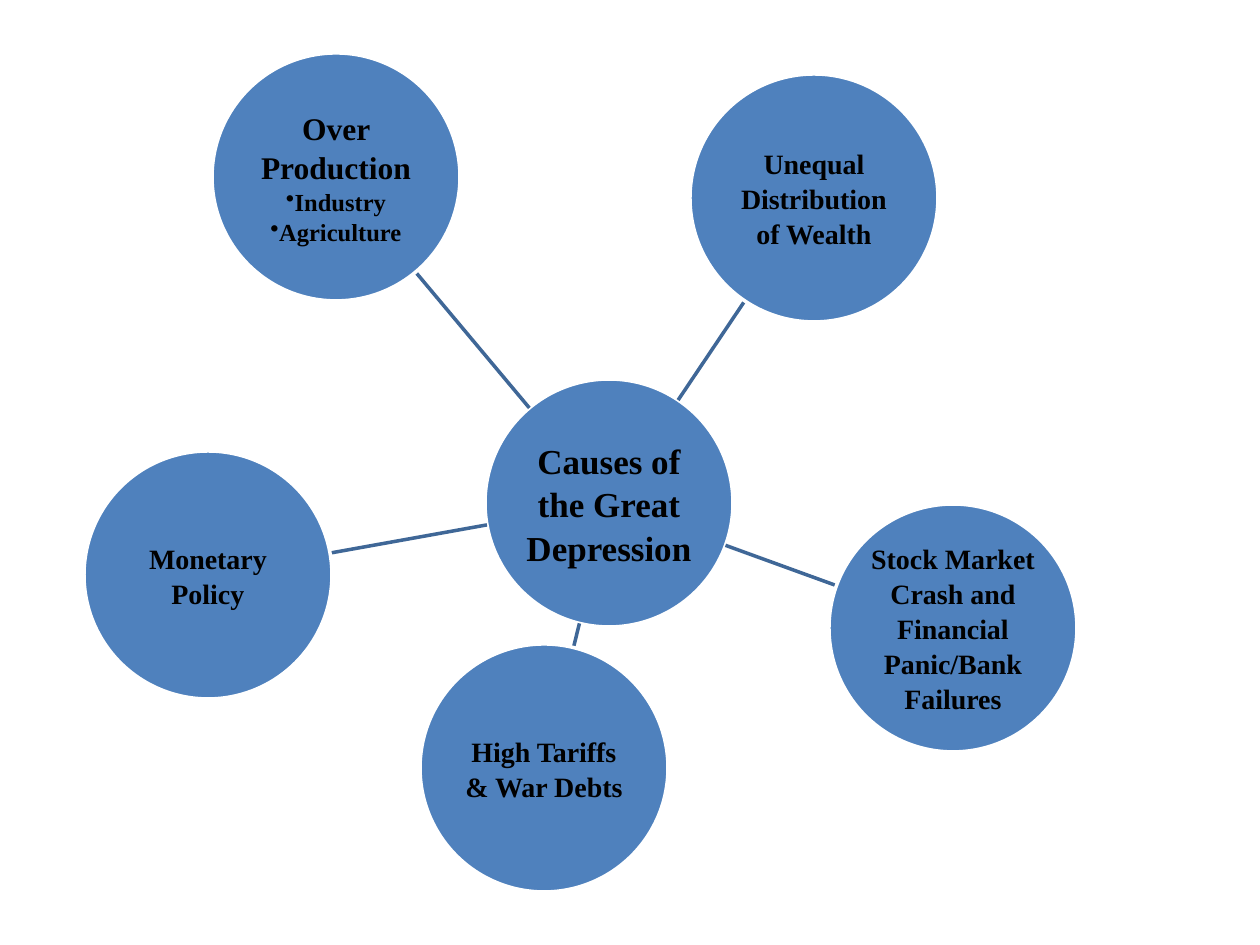
import math

from lxml import etree
from pptx import Presentation, util as u
from pptx.dml.color import RGBColor
from pptx.enum import shapes, text
from pptx.oxml.ns import qn

PX = 914400 // 126
RADIUS = 124
FONT = "Times New Roman"

BLUE = RGBColor(0x4F, 0x81, 0xBD)
SPOKE_BLUE = RGBColor(0x3F, 0x67, 0x97)
WHITE = RGBColor(0xFF, 0xFF, 0xFF)
BLACK = RGBColor(0, 0, 0)

# Circle centre in px, main text, its size in points, bulleted items
HUB = ((609, 503), "Causes of the Great Depression", 20, [])
CAUSES = [
    ((208, 575), "Monetary Policy", 16, []),
    ((336, 177), "Over Production", 18, ["Industry", "Agriculture"]),
    ((814, 198), "Unequal Distribution of Wealth", 16, []),
    ((953, 628), "Stock Market Crash and Financial Panic/Bank Failures", 16, []),
    ((544, 768), "High Tariffs & War Debts", 16, []),
]


def px(length):
    return round(length * PX)


def style_paragraph(paragraph, words, size):
    paragraph.text = words
    paragraph.alignment = text.PP_ALIGN.CENTER
    paragraph.line_spacing = 1.04
    font = paragraph.font
    font.name, font.size, font.bold = FONT, u.Pt(size), True
    font.color.rgb = BLACK


def add_bullet(paragraph):
    properties = paragraph._p.get_or_add_pPr()
    properties.set("marL", "0")
    properties.set("indent", "0")
    bullet = etree.Element(qn("a:buChar"), char="•")
    # The bullet must come before the default run properties
    properties.find(qn("a:defRPr")).addprevious(bullet)


def add_circle(slide, centre, words, size, items):
    left, top = (px(c - RADIUS) for c in centre)
    circle = slide.shapes.add_shape(
        shapes.MSO_SHAPE.OVAL, left, top, px(2 * RADIUS), px(2 * RADIUS))
    circle.shadow.inherit = False
    circle.fill.solid()
    circle.fill.fore_color.rgb = BLUE
    circle.line.color.rgb = WHITE
    circle.line.width = u.Pt(2)

    frame = circle.text_frame
    frame.word_wrap = True
    frame.vertical_anchor = text.MSO_ANCHOR.MIDDLE
    frame.margin_left = frame.margin_right = px(1)
    frame.margin_top = frame.margin_bottom = px(1)
    style_paragraph(frame.paragraphs[0], words, size)
    for item in items:
        paragraph = frame.add_paragraph()
        style_paragraph(paragraph, item, 14)
        add_bullet(paragraph)


def add_spoke(slide, start, end):
    """Join two circles from edge to edge, along the line of their centres."""
    reach = RADIUS / math.dist(start, end)
    dx, dy = ((b - a) * reach for a, b in zip(start, end))
    spoke = slide.shapes.add_connector(
        shapes.MSO_CONNECTOR.STRAIGHT,
        px(start[0] + dx), px(start[1] + dy), px(end[0] - dx), px(end[1] - dy))
    spoke.line.color.rgb = SPOKE_BLUE
    spoke.line.width = u.Pt(2)
    etree.SubElement(spoke._element.spPr, qn("a:effectLst"))


def main():
    deck = Presentation()
    deck.slide_width, deck.slide_height = u.Inches(10), u.Inches(7.5)
    slide = deck.slides.add_slide(deck.slide_layouts[6])

    # Central topic
    add_circle(slide, *HUB)

    # Causes around it
    for cause in CAUSES:
        add_spoke(slide, HUB[0], cause[0])
        add_circle(slide, *cause)

    deck.save("out.pptx")


if __name__ == "__main__":
    main()
